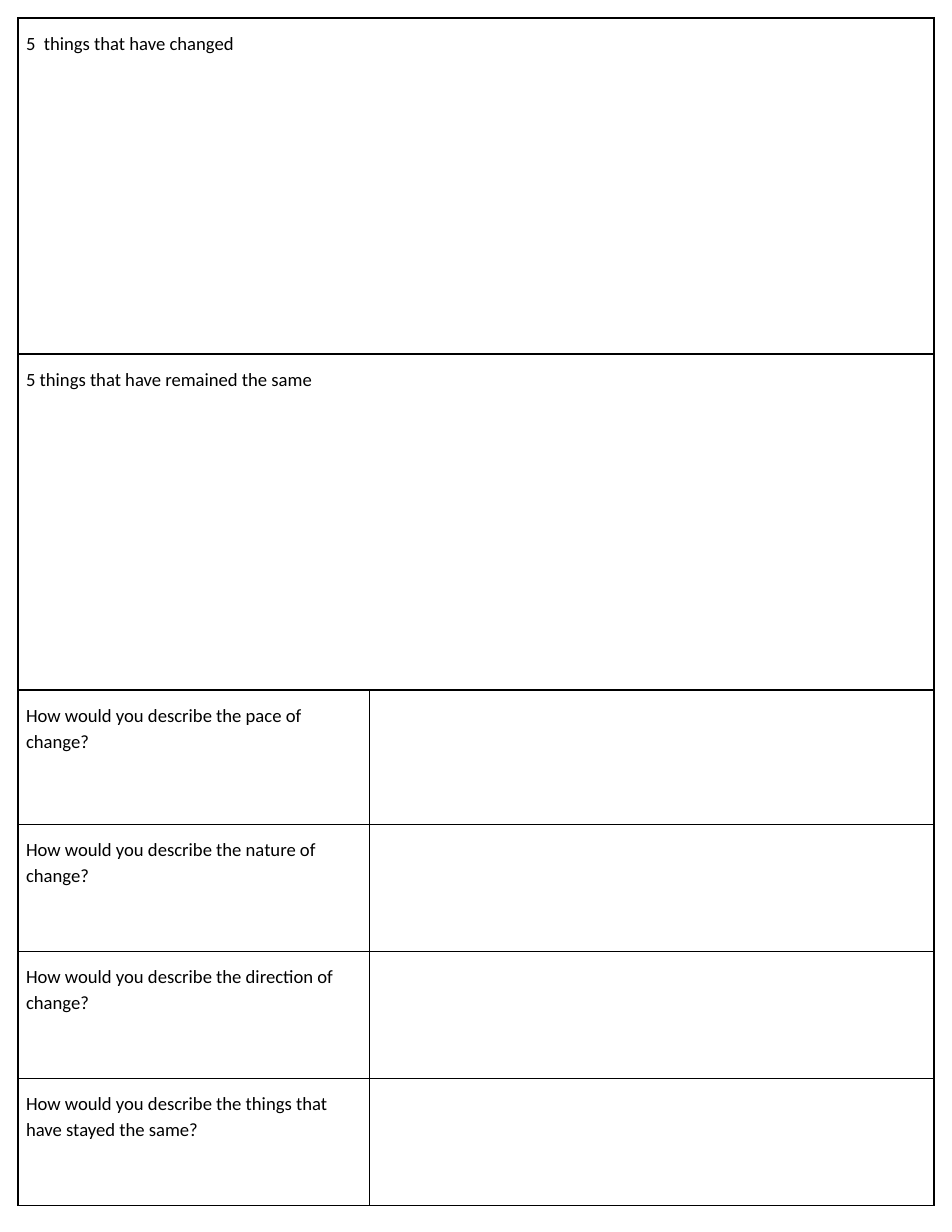
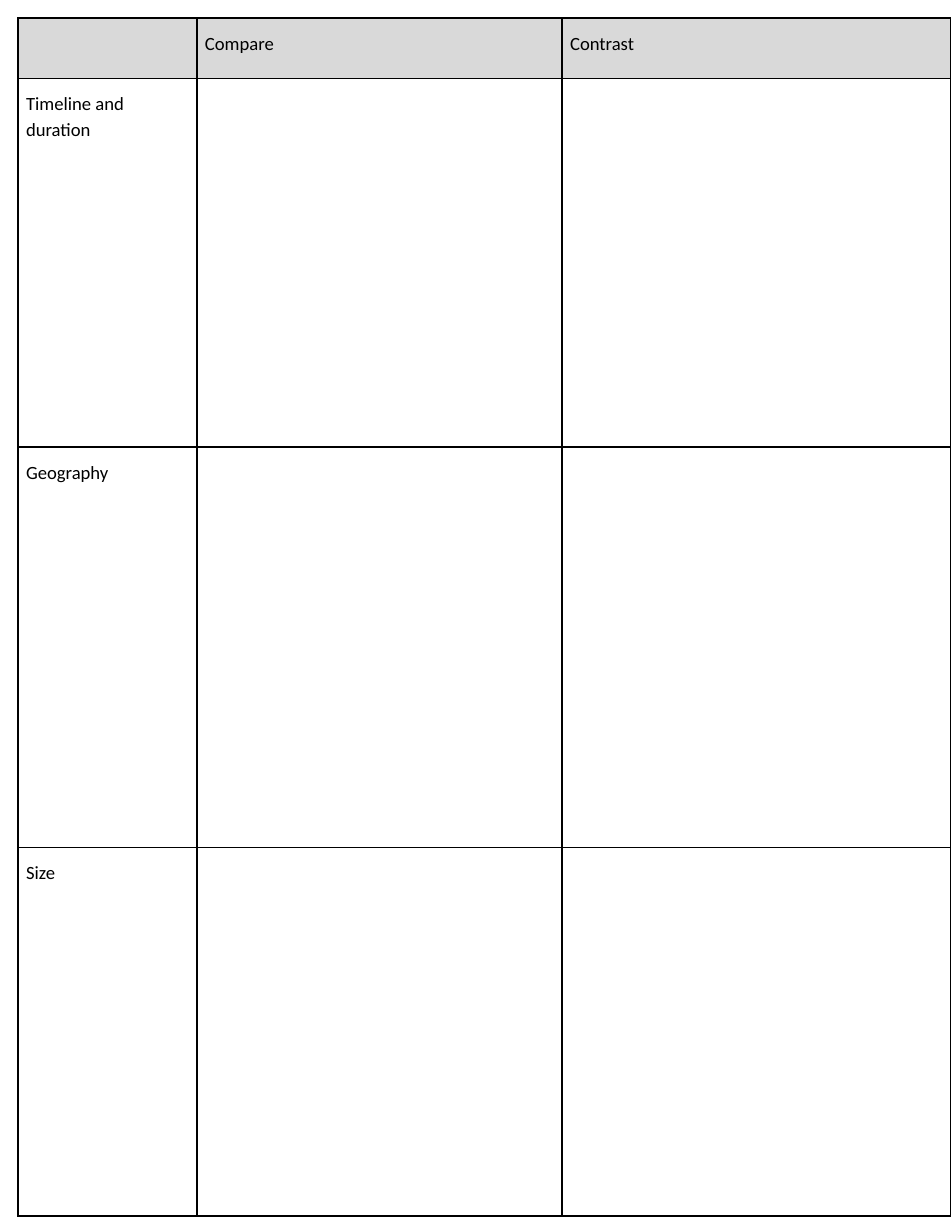
from lxml.etree import SubElement
from pptx import Presentation
from pptx.dml.color import RGBColor
from pptx.oxml.ns import qn
from pptx.util import Cm, Pt

INK = RGBColor(0x00, 0x00, 0x00)
HEADER_GREY = RGBColor(0xD9, 0xD9, 0xD9)
FONT = "Calibri"
MARGIN = 0.41
BLANK_LAYOUT = 6


class Worksheet:
    def __init__(self):
        self.deck = Presentation()
        self.deck.slide_width = Cm(21.59)
        self.deck.slide_height = Cm(27.94)
        self.page = None

    def new_page(self):
        layout = self.deck.slide_layouts[BLANK_LAYOUT]
        self.page = self.deck.slides.add_slide(layout)

    def grid(self, widths, heights):
        frame = self.page.shapes.add_table(
            len(heights), len(widths), Cm(MARGIN), Cm(MARGIN),
            Cm(sum(widths)), Cm(sum(heights)))
        table = frame.table
        table.first_row = False
        table.horz_banding = False
        for column, width in zip(table.columns, widths):
            column.width = Cm(width)
        for row, height in zip(table.rows, heights):
            row.height = Cm(height)
        for cell in table.iter_cells():
            self.border(cell)
            cell.fill.background()
        return table

    def border(self, cell):
        properties = cell._tc.get_or_add_tcPr()
        for side in ("a:lnL", "a:lnR", "a:lnT", "a:lnB"):
            line = SubElement(properties, qn(side), w=str(Pt(1)))
            fill = SubElement(line, qn("a:solidFill"))
            SubElement(fill, qn("a:srgbClr"), val=str(INK))

    def label(self, cell, text):
        cell.margin_left = cell.margin_right = Cm(0.18)
        cell.margin_top = cell.margin_bottom = Cm(0.25)
        cell.text = text
        paragraph = cell.text_frame.paragraphs[0]
        paragraph.line_spacing = 1.15
        paragraph.font.name = FONT
        paragraph.font.size = Pt(12)
        paragraph.font.color.rgb = INK

    def shade(self, cell):
        cell.fill.solid()
        cell.fill.fore_color.rgb = HEADER_GREY


def add_change_page(sheet):
    lists = ["5  things that have changed", "5 things that have remained the same"]
    topics = ["the pace of change", "the nature of change",
              "the direction of change", "the things that have stayed the same"]
    questions = [f"How would you describe {topic}?" for topic in topics]
    sheet.new_page()
    table = sheet.grid([7.97, 12.8], [7.62] * 2 + [3.05] + [2.88] * 3)
    for row in range(len(lists)):
        table.cell(row, 0).merge(table.cell(row, 1))
    for row, prompt in enumerate(lists + questions):
        sheet.label(table.cell(row, 0), prompt)


def add_comparison_page(sheet):
    sheet.new_page()
    table = sheet.grid([4.06, 8.28, 8.81], [1.37, 8.36, 9.08, 8.36])
    for column, heading in enumerate(["", "Compare", "Contrast"]):
        cell = table.cell(0, column)
        sheet.shade(cell)
        if heading:
            sheet.label(cell, heading)
    for row, aspect in enumerate(["Timeline and duration", "Geography", "Size"], 1):
        sheet.label(table.cell(row, 0), aspect)


def main():
    sheet = Worksheet()
    add_change_page(sheet)
    add_comparison_page(sheet)
    sheet.deck.save("out.pptx")


if __name__ == "__main__":
    main()
